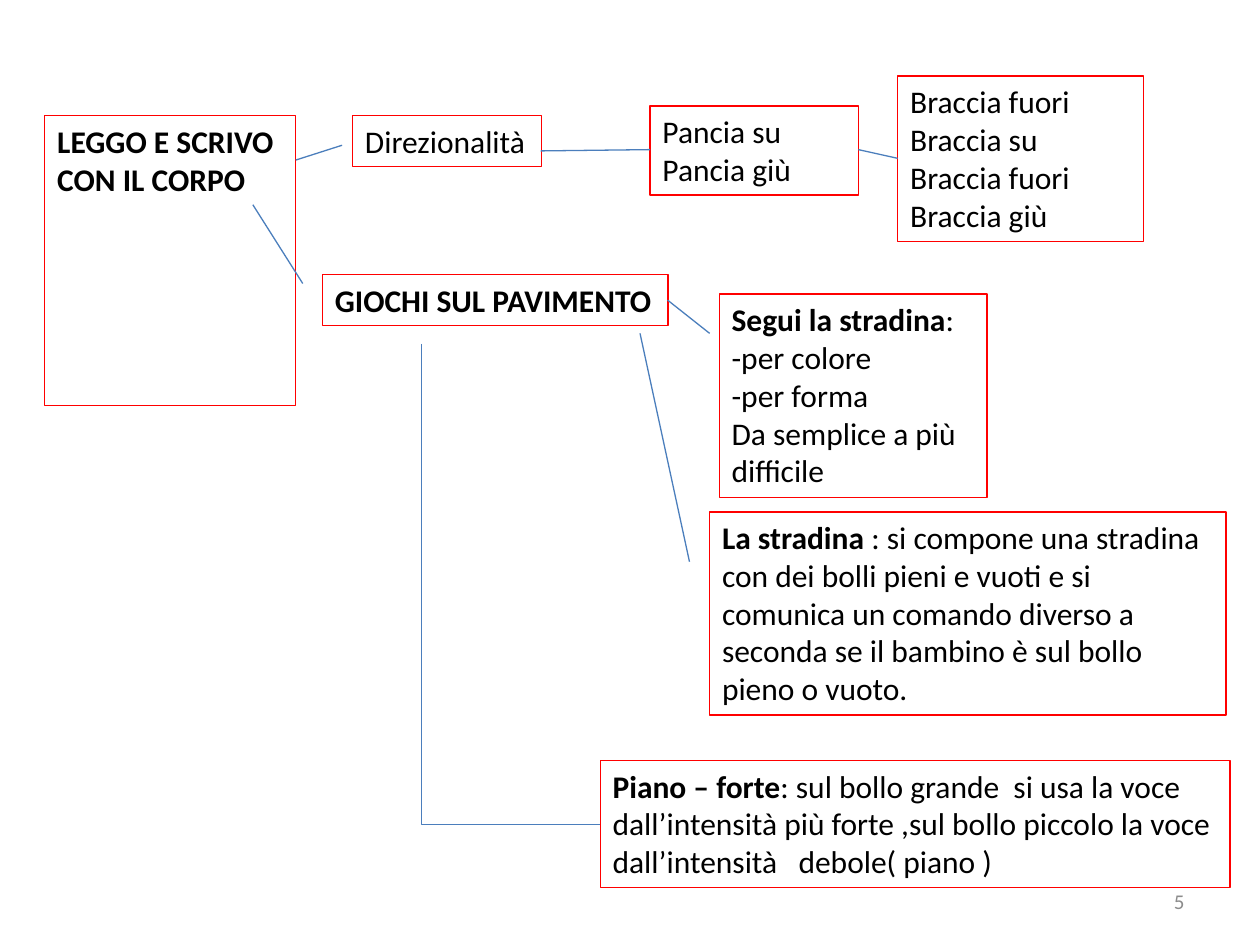
import pptx
import pptx.dml.color
import pptx.enum.shapes
import pptx.enum.text
import pptx.oxml
import pptx.oxml.ns
import pptx.util

Pt = pptx.util.Pt
FONT = "Calibri"
RED, BLUE, BLACK, GREY = "FF0000", "4B7EBC", "000000", "8C8C8C"


def color(hex_value):
    return pptx.dml.color.RGBColor.from_string(hex_value)


def style_paragraph(paragraph, size=18, hex_value=BLACK, bold=None):
    paragraph.font.name = FONT
    paragraph.font.size = Pt(size)
    paragraph.font.color.rgb = color(hex_value)
    paragraph.font.bold = bold


def fill_box(box, lines, bold=False, lead="", border=1, wrap=True):
    """Give a box its red border and its lines; lead is bold text before the first line."""
    box.line.color.rgb = color(RED)
    box.line.width = Pt(border)
    frame = box.text_frame
    frame.word_wrap = wrap
    frame.auto_size = pptx.enum.text.MSO_AUTO_SIZE.SHAPE_TO_FIT_TEXT
    frame.vertical_anchor = pptx.enum.text.MSO_ANCHOR.TOP
    for index, line in enumerate(lines):
        paragraph = frame.add_paragraph() if index else frame.paragraphs[0]
        paragraph.alignment = pptx.enum.text.PP_ALIGN.LEFT
        style_paragraph(paragraph, bold=bold)
        if lead and index == 0:
            lead_run = paragraph.add_run()
            lead_run.text = lead
            lead_run.font.bold = True
        paragraph.add_run().text = line


def add_heading(slide, lines, left, top, width, height):
    heading = slide.shapes.title
    heading.left, heading.top = Pt(left), Pt(top)
    heading.width, heading.height = Pt(width), Pt(height)
    fill_box(heading, lines, bold=True, border=0.75, wrap=False)


def add_box(slide, lines, left, top, width, height, **style):
    box = slide.shapes.add_textbox(Pt(left), Pt(top), Pt(width), Pt(height))
    fill_box(box, lines, **{"border": 0.75, **style})


def add_link(slide, start, end, kind=pptx.enum.shapes.MSO_CONNECTOR.STRAIGHT):
    link = slide.shapes.add_connector(kind, *map(Pt, start + end))
    link.line.color.rgb = color(BLUE)
    link.line.width = Pt(0.75)
    properties = link._element.spPr
    properties.append(pptx.oxml.parse_xml(
        "<a:effectLst %s/>" % pptx.oxml.ns.nsdecls("a")))
    return properties


def add_corner_link(slide, start, end):
    """Link that runs down from start, then right to end, with one bend."""
    center_x, center_y = (start[0] + end[0]) / 2, (start[1] + end[1]) / 2
    half_run, half_drop = (end[0] - start[0]) / 2, (end[1] - start[1]) / 2
    # The bend is stored mirrored and turned by 270 degrees about its centre.
    properties = add_link(
        slide,
        (center_x + half_drop, center_y - half_run),
        (center_x - half_drop, center_y + half_run),
        pptx.enum.shapes.MSO_CONNECTOR.ELBOW)
    properties.find(pptx.oxml.ns.qn("a:xfrm")).set("rot", str(270 * 60000))
    properties.find(pptx.oxml.ns.qn("a:prstGeom")).set("prst", "bentConnector2")


def add_page_number(slide, number):
    page = slide.shapes.add_textbox(Pt(516), Pt(500.5), Pt(168), Pt(28.75))
    page.text_frame.word_wrap = True
    page.text_frame.vertical_anchor = pptx.enum.text.MSO_ANCHOR.MIDDLE
    paragraph = page.text_frame.paragraphs[0]
    paragraph.text = number
    paragraph.alignment = pptx.enum.text.PP_ALIGN.RIGHT
    style_paragraph(paragraph, 12, GREY)


def main():
    deck = pptx.Presentation()
    deck.slide_width, deck.slide_height = Pt(720), Pt(540)
    slide = deck.slides.add_slide(deck.slide_layouts.get_by_name("Title Only"))

    add_heading(slide, ["LEGGO E SCRIVO", "CON IL CORPO"], 25.5, 66, 143.5, 51)
    add_box(slide, ["Direzionalità"], 201.5, 66, 108, 29)
    add_box(slide, ["Pancia su", "Pancia giù"], 371.5, 60.5, 119, 51)
    add_box(slide, ["Braccia fuori", "Braccia su", "Braccia fuori", "Braccia giù"],
            513, 43.5, 140.5, 94.5)
    add_box(slide, ["GIOCHI SUL PAVIMENTO"], 184.25, 157, 197.5, 29,
            bold=True, wrap=False)
    add_box(slide, [":", "-per colore", "-per forma", "Da semplice a più difficile"],
            411, 168, 153, 116.5, lead="Segui la stradina")
    add_box(slide, [": si compone una stradina con dei bolli pieni e vuoti e si "
                    "comunica un comando diverso a seconda se il bambino è sul "
                    "bollo pieno o vuoto."],
            405.5, 292.5, 295, 116, lead="La stradina ", border=1)
    add_box(slide, [": sul bollo grande  si usa la voce  dall’intensità più forte "
                    ",sul bollo piccolo la voce dall’intensità   debole( piano )"],
            343, 434.5, 360, 72.5, lead="Piano – forte")

    for start, end in [
        ((169, 91.5), (195.5, 83)),
        ((371.5, 85.5), (309, 86.25)),
        ((490.5, 85.5), (513, 90.5)),
        ((144.5, 117), (173, 162)),
        ((381.5, 171.5), (405.5, 190.5)),
        ((365.75, 190.5), (394, 321)),
    ]:
        add_link(slide, start, end)
    add_corner_link(slide, (241, 196.5), (343, 471))
    add_page_number(slide, "5")

    deck.save("out.pptx")


if __name__ == "__main__":
    main()
